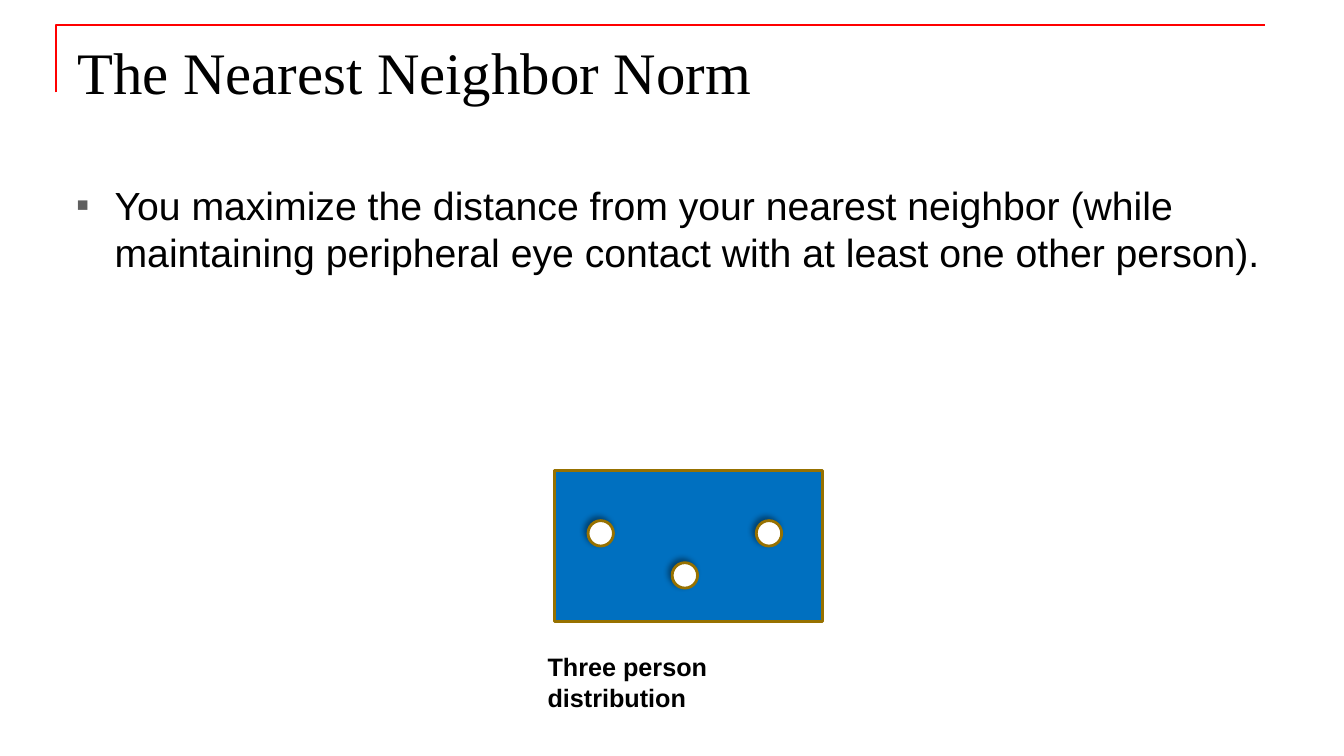
from dataclasses import dataclass

from lxml.etree import SubElement
from pptx import Presentation
from pptx.dml.color import RGBColor
from pptx.enum.shapes import MSO_SHAPE as Preset
from pptx.enum.text import MSO_ANCHOR as Anchor, MSO_AUTO_SIZE as AutoSize, PP_ALIGN as Align
from pptx.oxml.ns import qn
from pptx.util import Cm, Pt

BLACK, WHITE, RED = "000000", "FFFFFF", "FF0000"
TABLE_BLUE, OUTLINE_BROWN, BULLET_GREY = "0070C0", "977100", "5F5F5F"


@dataclass(frozen=True)
class Box:
    left: float
    top: float
    width: float
    height: float

    def lengths(self) -> tuple:
        return Cm(self.left), Cm(self.top), Cm(self.width), Cm(self.height)


@dataclass(frozen=True)
class TextStyle:
    font: str
    size: float
    bold: bool = False


SEAT_SIZE = 0.64
SEAT_LEFT, SEAT_PITCH = 14.82, 2.12
SEAT_TOPS = (13.12, 14.18, 13.12)
SEATS = [Box(SEAT_LEFT + index * SEAT_PITCH, top, SEAT_SIZE, SEAT_SIZE)
         for index, top in enumerate(SEAT_TOPS)]


def apply(target, values: dict) -> None:
    for name, value in values.items():
        setattr(target, name, value)


def colour(hex_value: str) -> RGBColor:
    return RGBColor.from_string(hex_value)


def add_element(parent, tag: str, **attributes: str):
    return SubElement(parent, qn(tag), attributes)


def write_text(shape, text: str, style: TextStyle):
    frame = shape.text_frame
    apply(frame, {"text": text, "word_wrap": True, "auto_size": AutoSize.NONE,
                  "vertical_anchor": Anchor.TOP})
    paragraph = frame.paragraphs[0]
    paragraph.alignment = Align.LEFT
    font = paragraph.runs[0].font
    apply(font, {"name": style.font, "size": Pt(style.size), "bold": style.bold})
    font.color.rgb = colour(BLACK)
    return paragraph


def add_text(slide, box: Box, text: str, style: TextStyle):
    return write_text(slide.shapes.add_textbox(*box.lengths()), text, style)


def add_bullet(paragraph) -> None:
    paragraph.space_before = Pt(5.6)
    properties = paragraph._p.get_or_add_pPr()
    properties.set("marL", str(Cm(0.95)))
    properties.set("indent", str(-Cm(0.95)))
    bullet_colour = add_element(properties, "a:buClr")
    add_element(bullet_colour, "a:srgbClr", val=BULLET_GREY)
    add_element(properties, "a:buSzPct", val="50000")
    add_element(properties, "a:buFont", typeface="Arial")
    add_element(properties, "a:buChar", char="■")


def add_preset(slide, preset, box: Box, fill: str):
    shape = slide.shapes.add_shape(preset, *box.lengths())
    shape.shadow.inherit = False
    shape.fill.solid()
    shape.fill.fore_color.rgb = colour(fill)
    shape.line.color.rgb = colour(OUTLINE_BROWN)
    shape.line.width = Pt(2)
    return shape


def add_seat_shadow(seat) -> None:
    effects = seat._element.spPr.find(qn("a:effectLst"))
    shadow = add_element(effects, "a:outerShdw", blurRad=str(Pt(4)), dist=str(Pt(3)),
                         dir=str(225 * 60000), algn="br", rotWithShape="0")
    shade = add_element(shadow, "a:srgbClr", val=BLACK)
    add_element(shade, "a:alpha", val="40000")


def add_corner_rule(slide) -> None:
    builder = slide.shapes.build_freeform(Cm(1.41), Cm(2.33))
    builder.add_line_segments([(Cm(1.41), Cm(0.64)), (Cm(31.89), Cm(0.64))], close=False)
    rule = builder.convert_to_shape()
    rule.shadow.inherit = False
    rule.fill.background()
    rule.line.color.rgb = colour(RED)
    rule.line.width = Pt(1.5)


def main() -> None:
    presentation = Presentation()
    apply(presentation, {"slide_width": Cm(33.87), "slide_height": Cm(19.05)})
    slide = presentation.slides.add_slide(presentation.slide_layouts[5])

    add_corner_rule(slide)
    title = slide.shapes.title
    title_box = Box(1.69, 0.76, 30.48, 3.18)
    apply(title, dict(zip(("left", "top", "width", "height"), title_box.lengths())))
    write_text(title, "The Nearest Neighbor Norm", TextStyle("Times New Roman", 42))

    norm = add_text(
        slide, Box(1.69, 4.45, 30.48, 12.57),
        "You maximize the distance from your nearest neighbor (while maintaining "
        "peripheral eye contact with at least one other person).",
        TextStyle("Arial", 28))
    add_bullet(norm)

    add_preset(slide, Preset.RECTANGLE, Box(13.97, 11.85, 6.77, 3.81), TABLE_BLUE)
    add_text(slide, Box(13.55, 16.3, 7.83, 1.8), "Three person distribution",
             TextStyle("Arial", 18, bold=True))
    for seat_box in SEATS:
        add_seat_shadow(add_preset(slide, Preset.OVAL, seat_box, WHITE))

    presentation.save("out.pptx")


if __name__ == "__main__":
    main()
